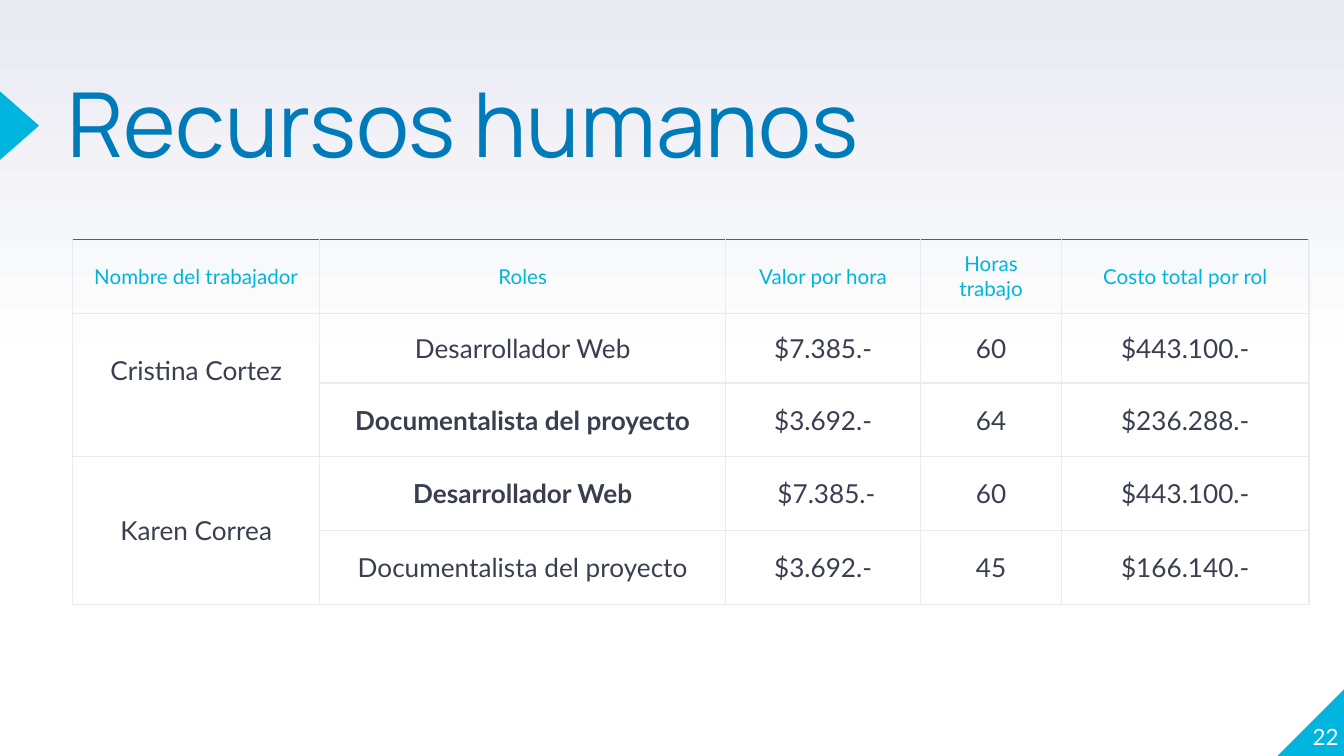
from lxml import etree
from pptx import Presentation
from pptx.dml.color import RGBColor
from pptx.enum import shapes, text
from pptx.oxml import ns
from pptx.util import Inches, Pt

CYAN, BLUE, INK, WHITE, PALE = "00B5DD", "007BB9", "3A3F50", "FFFFFF", "E9EAF2"
TITLE = "Recursos humanos"
PAGE = "22"
HEADS = ["Nombre del trabajador", "Roles", "Valor por hora",
         "Horas trabajo", "Costo total por rol"]
# worker, space below the name, then (role, bold, rate, hours, cost)
STAFF = [
    ("Cristina Cortez", 0.29, [
        ("Desarrollador Web", False, "$7.385.-", "60", "$443.100.-"),
        ("Documentalista del proyecto", True, "$3.692.-", "64", "$236.288.-")]),
    ("Karen Correa", 0.07, [
        ("Desarrollador Web", True, " $7.385.-", "60", "$443.100.-"),
        ("Documentalista del proyecto", False, "$3.692.-", "45", "$166.140.-")]),
]
WIDTHS = [1.84, 3.02, 1.45, 1.05, 1.84]
HEIGHTS = [0.55, 0.52, 0.55, 0.55, 0.55]


def rgb(hexa):
    return RGBColor.from_string(hexa)


def write(frame, words, size, color, align, font="Lato", bold=False):
    para = frame.paragraphs[0]
    para.alignment = align
    run = para.add_run()
    run.text = words
    run.font.size, run.font.name, run.font.bold = Pt(size), font, bold
    run.font.color.rgb = rgb(color)
    return para


def add_box(slide, at, anchor):
    frame = slide.shapes.add_textbox(*map(Inches, at)).text_frame
    frame.word_wrap = True
    frame.vertical_anchor = anchor
    frame.margin_left = frame.margin_right = 0
    frame.margin_top = frame.margin_bottom = 0
    return frame


def add_mark(slide, kind, at):
    mark = slide.shapes.add_shape(kind, *map(Inches, at))
    mark.shadow.inherit = False
    mark.fill.solid()
    mark.fill.fore_color.rgb = rgb(CYAN)
    mark.line.fill.background()
    return mark


def edge(cell, top):
    """Draw the four cell borders, the top one in its own colour."""
    props = cell._tc.get_or_add_tcPr()
    for side in "LRTB":
        line = etree.SubElement(props, ns.qn("a:ln" + side), w=str(Pt(0.75)))
        fill = etree.SubElement(line, ns.qn("a:solidFill"))
        etree.SubElement(fill, ns.qn("a:srgbClr"), val=top if side == "T" else PALE)


def fill_cell(cell, words, size=14, color=INK, bold=False, below=0.07):
    cell.vertical_anchor = text.MSO_ANCHOR.MIDDLE
    cell.margin_left = cell.margin_right = Inches(0.1)
    cell.margin_top, cell.margin_bottom = Inches(0.07), Inches(below)
    write(cell.text_frame, words, size, color, text.PP_ALIGN.CENTER, bold=bold)


def add_grid(slide):
    grid = slide.shapes.add_table(
        len(HEIGHTS), len(WIDTHS), Inches(0.54), Inches(1.78),
        Inches(sum(WIDTHS)), Inches(sum(HEIGHTS))).table
    grid.first_row = grid.horz_banding = False
    for col, width in zip(grid.columns, WIDTHS):
        col.width = Inches(width)
    for i, (row, height) in enumerate(zip(grid.rows, HEIGHTS)):
        row.height = Inches(height)
        for cell in row.cells:
            edge(cell, PALE if i else BLUE)
            cell.fill.background()

    for j, head in enumerate(HEADS):
        fill_cell(grid.cell(0, j), head, 11, CYAN)
    i = 1
    for name, below, jobs in STAFF:
        grid.cell(i, 0).merge(grid.cell(i + len(jobs) - 1, 0))
        fill_cell(grid.cell(i, 0), name, below=below)
        for role, bold, *facts in jobs:
            fill_cell(grid.cell(i, 1), role, bold=bold)
            for j, fact in enumerate(facts, 2):
                fill_cell(grid.cell(i, j), fact)
            i += 1


def main():
    deck = Presentation()
    deck.slide_width = Inches(10)
    deck.slide_height = deck.slide_width * 9 // 16
    slide = deck.slides.add_slide(deck.slide_layouts[6])

    back = slide.background.fill
    back.gradient()
    back.gradient_angle = 90
    for stop, (place, color) in zip(back.gradient_stops, [(0.5, WHITE), (1, PALE)]):
        stop.position = place
        stop.color.rgb = rgb(color)

    kinds = shapes.MSO_SHAPE
    corner = add_mark(slide, kinds.RIGHT_TRIANGLE, (9.5, 5.12, 0.51, 0.51))
    corner._element.spPr.xfrm.set("flipH", "1")
    arrow = add_mark(slide, kinds.ISOSCELES_TRIANGLE, (-0.11, 0.79, 0.51, 0.29))
    arrow.rotation = 90

    frame = add_box(slide, (0.5, 0.66, 9.28, 1.18), text.MSO_ANCHOR.TOP)
    para = write(frame, TITLE, 48, BLUE, text.PP_ALIGN.LEFT, "Manrope")
    para.line_spacing = 0.8
    add_grid(slide)
    frame = add_box(slide, (9.46, 5.07, 0.5, 0.51), text.MSO_ANCHOR.BOTTOM)
    write(frame, PAGE, 12, WHITE, text.PP_ALIGN.RIGHT)
    deck.save("out.pptx")


if __name__ == "__main__":
    main()
